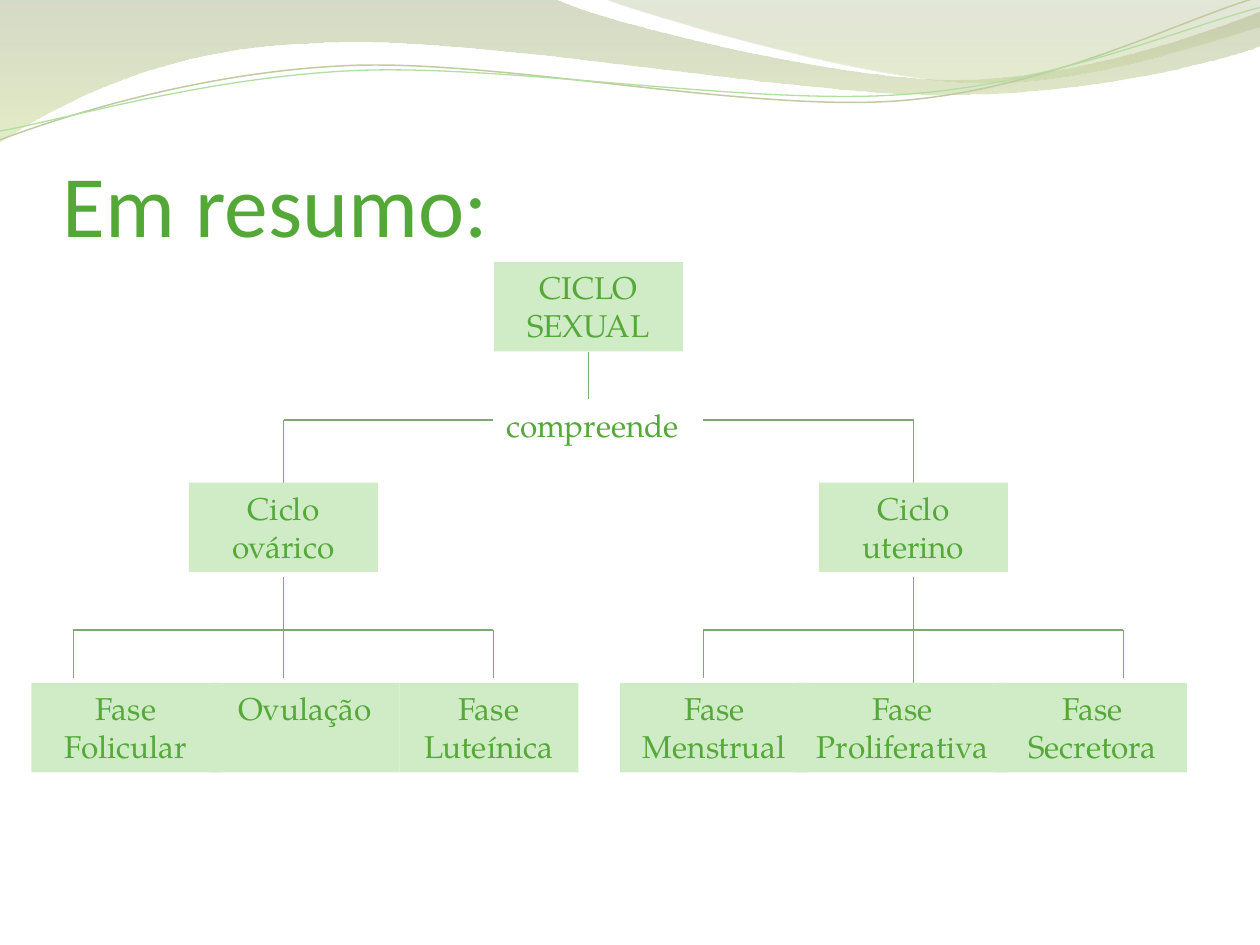
from dataclasses import dataclass
from math import cos, radians, sin

from lxml.etree import SubElement
from pptx import Presentation
from pptx.dml.color import RGBColor
from pptx.enum.shapes import MSO_CONNECTOR, MSO_SHAPE
from pptx.enum.text import MSO_ANCHOR, MSO_AUTO_SIZE, PP_ALIGN
from pptx.oxml.ns import qn
from pptx.util import Inches, Pt

Point = tuple[float, float]


@dataclass(frozen=True)
class Theme:
    title_color: str = "54A838"
    text_color: str = "55A839"
    box_fill: str = "D0ECC6"
    branch: str = "82A676"
    title_font: str = "Calibri"
    body_font: str = "TeX Gyre Pagella"
    title_size: float = 50
    body_size: float = 18
    branch_width: float = 0.75


@dataclass(frozen=True)
class Stop:
    position: float
    color: str
    opacity: int


@dataclass(frozen=True)
class Wave:
    start: Point
    segments: list[tuple[Point, ...]]
    stops: tuple[Stop, ...] = ()
    line_color: str = ""
    line_width: float = 0
    center: Point = (0, 0)
    tilt: float = 0


@dataclass(frozen=True)
class Concept:
    label: str
    left: float
    top: float
    width: float = 1.5


THEME = Theme()
BOX_HEIGHT = 0.71
CYCLE_TOP, PHASE_TOP = 3.83, 5.42
CYCLE_CENTERS = (2.25, 7.25)
PHASE_GAP = 5 / 3
SPLIT_Y, PHASE_BAR_Y = 10 / 3, 5

WAVES = [
    Wave((0, 0), [
        ((4.4, -0.01),),
        ((4.76, 0.17), (6.64, 0.63), (7.58, 0.63)),
        ((8.53, 0.63), (9.58, 0.26), (10, 0.09)),
        ((10.01, 0.36),),
        ((9.83, 0.44), (8.7, 0.76), (7.46, 0.75)),
        ((6.22, 0.75), (3.82, 0.28), (2.57, 0.34)),
        ((1.29, 0.36), (0.46, 0.83), (-0.01, 1.13)),
        ((0, 0),),
    ], stops=(Stop(0, "A4AE83", 45), Stop(1, "CDDD99", 55))),
    Wave((4.79, -0.01), [
        ((5.09, 0.11), (6.82, 0.62), (7.69, 0.65)),
        ((8.56, 0.69), (9.61, 0.32), (10, 0.21)),
        ((10, 0),),
        ((4.79, -0.01),),
    ], stops=(Stop(0, "A5AF81", 30), Stop(0.8, "C6D398", 45))),
    Wave((0, 1.11), [
        ((0.48, 0.93), (1.58, 0.57), (2.77, 0.52)),
        ((3.95, 0.47), (5.93, 0.89), (7.13, 0.8)),
        ((8.33, 0.71), (9.38, 0.15), (9.98, -0.02)),
    ], line_color="C1CBA1", line_width=0.85, center=(4.99, 0.57), tilt=-2.7),
    Wave((0, 1.04), [
        ((0.47, 0.96), (1.64, 0.61), (2.83, 0.56)),
        ((4.03, 0.51), (5.97, 0.84), (7.17, 0.75)),
        ((8.36, 0.67), (9.41, 0.21), (10, 0.06)),
    ], line_color="B0DFA0", line_width=0.75, center=(5, 0.59), tilt=-2.7),
]

CONCEPTS = [
    Concept("CICLO SEXUAL", 3.92, 2.08),
    Concept("Ciclo ovárico", 1.5, CYCLE_TOP),
    Concept("Ciclo uterino", 6.5, CYCLE_TOP),
    Concept("Fase Secretora", 7.92, PHASE_TOP),
    Concept("Fase Proliferativa", 6.33, PHASE_TOP, 1.67),
    Concept("Fase Menstrual", 4.92, PHASE_TOP),
    Concept("Fase Luteínica", 3.17, PHASE_TOP, 1.42),
    Concept("Ovulação", 1.67, PHASE_TOP),
    Concept("Fase Folicular", 0.25, PHASE_TOP),
]


def level(wave: Wave, point: Point) -> Point:
    angle = radians(-wave.tilt)
    dx, dy = point[0] - wave.center[0], point[1] - wave.center[1]
    return (Inches(wave.center[0] + dx * cos(angle) - dy * sin(angle)),
            Inches(wave.center[1] + dx * sin(angle) + dy * cos(angle)))


def bend(ribbon, segments: list[tuple[Point, ...]]) -> None:
    sides = iter(list(ribbon._element.spPr.iter(qn("a:lnTo"))))
    for segment in segments:
        first, *others = [next(sides) for _ in segment]
        if others:
            first.tag = qn("a:cubicBezTo")
        for side in others:
            first.append(side[0])
            side.getparent().remove(side)


def draw_wave(slide, wave: Wave) -> None:
    builder = slide.shapes.build_freeform(*level(wave, wave.start))
    builder.add_line_segments([level(wave, point) for segment in wave.segments
                               for point in segment], close=bool(wave.stops))
    ribbon = builder.convert_to_shape()
    bend(ribbon, wave.segments)
    ribbon.rotation = wave.tilt
    ribbon.shadow.inherit = False
    if not wave.stops:
        ribbon.fill.background()
        ribbon.line.color.rgb = RGBColor.from_string(wave.line_color)
        ribbon.line.width = Pt(wave.line_width)
        return
    ribbon.fill.gradient()
    ribbon.fill.gradient_angle = 270
    for target, stop in zip(ribbon.fill.gradient_stops, wave.stops):
        target.position = stop.position
        target.color.rgb = RGBColor.from_string(stop.color)
    tints = list(ribbon._element.spPr.iter(qn("a:srgbClr")))
    for tint, stop in zip(tints, wave.stops):
        SubElement(tint, qn("a:alpha")).set("val", str(stop.opacity * 1000))
    ribbon.line.fill.background()


def write_text(holder, text: str, *, font: str = THEME.body_font,
               size: float = THEME.body_size, color: str = THEME.text_color,
               align: PP_ALIGN = PP_ALIGN.LEFT, anchor: MSO_ANCHOR = MSO_ANCHOR.TOP,
               fit: MSO_AUTO_SIZE = MSO_AUTO_SIZE.SHAPE_TO_FIT_TEXT,
               side_margin: float = 0.1, bottom_margin: float = 0.05) -> None:
    frame = holder.text_frame
    frame.word_wrap = True
    frame.auto_size = fit
    frame.vertical_anchor = anchor
    frame.margin_left = frame.margin_right = Inches(side_margin)
    frame.margin_bottom = Inches(bottom_margin)
    paragraph = frame.paragraphs[0]
    paragraph.alignment = align
    run = paragraph.add_run()
    run.text = text
    run.font.name = font
    run.font.size = Pt(size)
    run.font.color.rgb = RGBColor.from_string(color)


def draw_concept(slide, concept: Concept) -> None:
    box = slide.shapes.add_shape(MSO_SHAPE.RECTANGLE, Inches(concept.left), Inches(concept.top),
                                 Inches(concept.width), Inches(BOX_HEIGHT))
    box.shadow.inherit = False
    box.fill.solid()
    box.fill.fore_color.rgb = RGBColor.from_string(THEME.box_fill)
    box.line.fill.background()
    write_text(box, concept.label, align=PP_ALIGN.CENTER)


def draw_branch(slide, start: Point, end: Point) -> None:
    branch = slide.shapes.add_connector(MSO_CONNECTOR.STRAIGHT, *map(Inches, (*start, *end)))
    branch.line.color.rgb = RGBColor.from_string(THEME.branch)
    branch.line.width = Pt(THEME.branch_width)
    SubElement(branch._element.spPr, qn("a:effectLst"))


def draw_branches(slide) -> None:
    draw_branch(slide, (4.67, 2.79), (4.67, 3.17))
    for center, side, middle_end in zip(CYCLE_CENTERS, (1, -1), (5.38, PHASE_TOP)):
        draw_branch(slide, (center + side * PHASE_GAP, SPLIT_Y), (center, SPLIT_Y))
        draw_branch(slide, (center, SPLIT_Y), (center, CYCLE_TOP))
        draw_branch(slide, (center, 4.58), (center, 5.08))
        draw_branch(slide, (center, PHASE_BAR_Y), (center, middle_end))
        for phase_x in (center - PHASE_GAP, center + PHASE_GAP):
            draw_branch(slide, (phase_x, PHASE_BAR_Y), (center, PHASE_BAR_Y))
            draw_branch(slide, (phase_x, PHASE_BAR_Y), (phase_x, 5.38))


def main() -> None:
    """Build the summary slide of the sexual cycle and save it."""
    deck = Presentation()
    deck.slide_width, deck.slide_height = Inches(10), Inches(7.5)
    slide = deck.slides.add_slide(deck.slide_layouts[6])
    for wave in WAVES:
        draw_wave(slide, wave)
    heading = slide.shapes.add_textbox(Inches(0.5), Inches(0.77), Inches(9), Inches(1.25))
    write_text(heading, "Em resumo:", font=THEME.title_font, size=THEME.title_size,
               color=THEME.title_color, anchor=MSO_ANCHOR.BOTTOM, fit=MSO_AUTO_SIZE.NONE,
               side_margin=0, bottom_margin=0)
    draw_branches(slide)
    verb = slide.shapes.add_textbox(Inches(3.92), Inches(3.17), Inches(1.58), Inches(0.4))
    write_text(verb, "compreende")
    for concept in CONCEPTS:
        draw_concept(slide, concept)
    deck.save("out.pptx")


if __name__ == "__main__":
    main()
